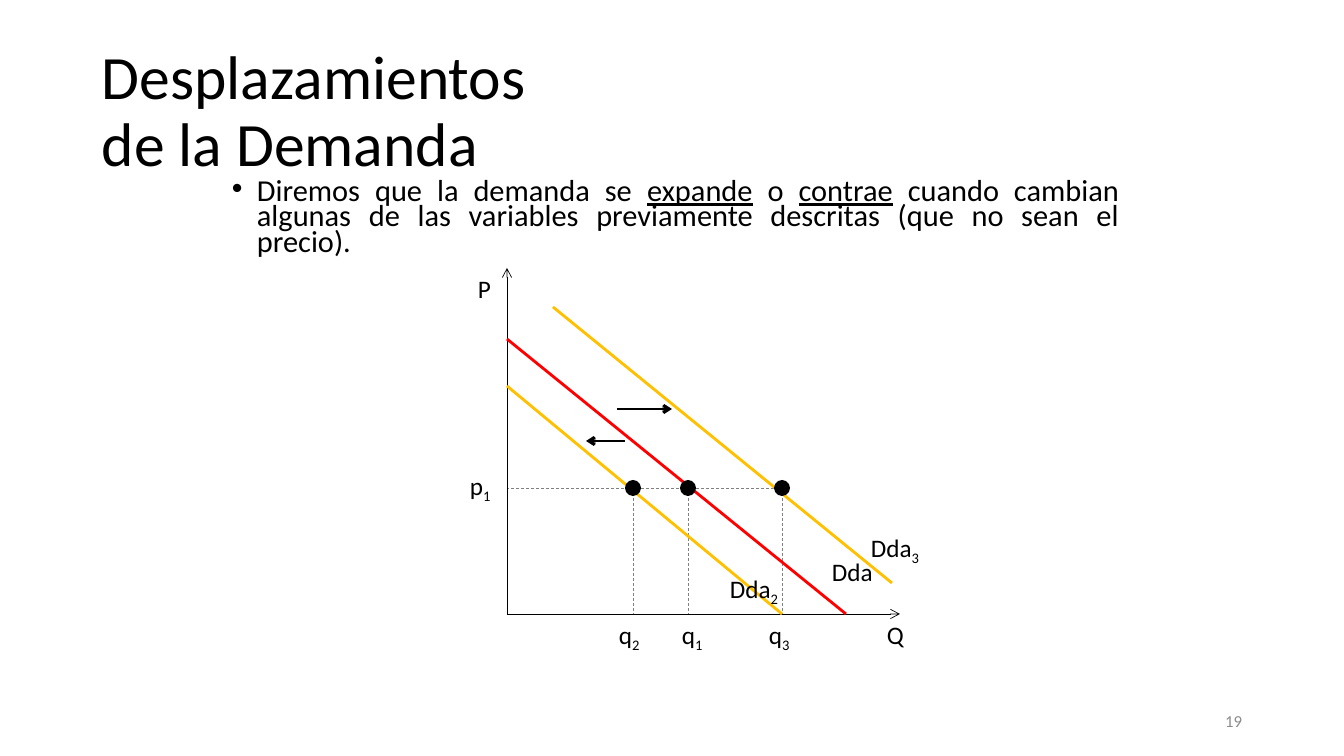
from lxml import etree
from pptx import Presentation
from pptx.dml.color import RGBColor
from pptx.enum.dml import MSO_LINE
from pptx.enum.shapes import MSO_CONNECTOR, MSO_SHAPE
from pptx.enum.text import MSO_ANCHOR, MSO_AUTO_SIZE, PP_ALIGN
from pptx.oxml.ns import qn
from pptx.util import Pt

BLACK = RGBColor(0x00, 0x00, 0x00)
GRAY = RGBColor(0x80, 0x80, 0x80)
NUMBER_GRAY = RGBColor(0x8C, 0x8C, 0x8C)
RED = RGBColor(0xFF, 0x00, 0x00)
GOLD = RGBColor(0xFF, 0xC0, 0x00)

STRAIGHT = MSO_CONNECTOR.STRAIGHT
OVAL = MSO_SHAPE.OVAL
DASH = MSO_LINE.DASH
TOP, MIDDLE = MSO_ANCHOR.TOP, MSO_ANCHOR.MIDDLE
GROW = MSO_AUTO_SIZE.SHAPE_TO_FIT_TEXT
LEFT, RIGHT, JUSTIFY = PP_ALIGN.LEFT, PP_ALIGN.RIGHT, PP_ALIGN.JUSTIFY

PAGE_WIDTH, PAGE_HEIGHT = 1344, 756
SCALE = 12192000 / PAGE_WIDTH


def px(length):
    return round(length * SCALE)


def add_span(para, text, size, color, font="Calibri", underline=False, subscript=False):
    span = para.add_run()
    span.text = text
    span.font.name = font
    span.font.size = Pt(size)
    span.font.color.rgb = color
    if underline:
        span.font.underline = True
    if subscript:
        span.font._element.set("baseline", "-25000")


class Page:
    def __init__(self, deck):
        self.shapes = deck.slides.add_slide(deck.slide_layouts[6]).shapes

    def box(self, left, top, width, height, anchor=TOP, align=LEFT, spacing=None):
        """Add a text box and return it with its first paragraph."""
        box = self.shapes.add_textbox(px(left), px(top), px(width), px(height))
        box.text_frame.word_wrap = True
        box.text_frame.vertical_anchor = anchor
        para = box.text_frame.paragraphs[0]
        para.alignment = align
        para.line_spacing = spacing
        return box, para

    def bullet(self, para, indent):
        properties = para._p.get_or_add_pPr()
        properties.set("marL", str(px(indent)))
        properties.set("indent", str(-px(indent)))
        font = etree.SubElement(properties, qn("a:buFont"))
        font.set("typeface", "Arial")
        etree.SubElement(properties, qn("a:buChar")).set("char", "•")

    def label(self, left, top, text, subscript=""):
        box, para = self.box(left, top, 95, 40)
        box.text_frame.auto_size = GROW
        add_span(para, text, 18, BLACK)
        if subscript:
            add_span(para, subscript, 18, BLACK, subscript=True)

    def line(self, start, end, color, width, dashed=False, arrow=False):
        line = self.shapes.add_connector(STRAIGHT, *map(px, start + end))
        line.line.color.rgb = color
        line.line.width = Pt(width)
        if dashed:
            line.line.dash_style = DASH
        if arrow:
            tail = etree.SubElement(line.line._get_or_add_ln(), qn("a:tailEnd"))
            tail.set("type", "arrow")
        etree.SubElement(line._element.spPr, qn("a:effectLst"))

    def dot(self, x, y, radius=8):
        dot = self.shapes.add_shape(
            OVAL, px(x - radius), px(y - radius), px(2 * radius), px(2 * radius))
        dot.shadow.inherit = False
        dot.fill.solid()
        dot.fill.fore_color.rgb = BLACK
        dot.line.fill.background()


def main():
    deck = Presentation()
    deck.slide_width, deck.slide_height = px(PAGE_WIDTH), px(PAGE_HEIGHT)
    page = Page(deck)

    # Title
    _, title = page.box(92, 40, 1159, 146, anchor=MIDDLE, spacing=0.9)
    add_span(title, "Desplazamientos", 44, BLACK)
    title.add_line_break()
    add_span(title, "de la Demanda", 44, BLACK)

    # Statement
    _, statement = page.box(222, 176, 907, 499, align=JUSTIFY, spacing=0.7)
    page.bullet(statement, 25)
    for text, underline in (
        ("Diremos que la demanda se ", False),
        ("expande", True),
        (" o ", False),
        ("contrae", True),
        (" cuando cambian algunas de las variables previamente descritas "
         "(que no sean el precio).", False),
    ):
        add_span(statement, text, 21.7, BLACK, underline=underline)

    # Slide number
    _, number = page.box(950, 701, 302, 40, anchor=MIDDLE, align=RIGHT)
    add_span(number, "19", 12, NUMBER_GRAY)

    # Price and quantity guides
    origin_x, origin_y, price_y = 507, 614, 488
    quantities = (("2", 633, 609), ("1", 688, 672), ("3", 782, 759))
    page.line((774, price_y), (origin_x, price_y), GRAY, 0.5, dashed=True)
    for subscript, x, label_left in quantities:
        page.line((x, price_y), (x, origin_y), GRAY, 0.5, dashed=True)
        page.label(label_left, origin_y, "q", subscript)
    page.label(460, 465, "p", "1")

    # Axes
    for end in ((origin_x, 268), (900, origin_y)):
        page.line((origin_x, origin_y), end, BLACK, 0.5, arrow=True)
    page.label(468, 268, "P")
    page.label(877, origin_y, "Q")

    # Demand curves
    for start, end, color in (
        ((origin_x, 339), (846, origin_y), RED),
        ((553, 307), (892, 583), GOLD),
        ((origin_x, 386), (782, origin_y), GOLD),
    ):
        page.line(start, end, color, 2)

    # Equilibrium points
    for _, x, _ in quantities:
        page.dot(x, price_y)

    # Shift arrows
    for start, end in (((617, 409), (672, 409)), ((625, 441), (586, 441))):
        page.line(start, end, BLACK, 2, arrow=True)

    # Curve names
    for left, top, subscript in ((861, 527, "3"), (822, 551, ""), (720, 568, "2")):
        page.label(left, top, "Dda", subscript)

    deck.save("out.pptx")


if __name__ == "__main__":
    main()
